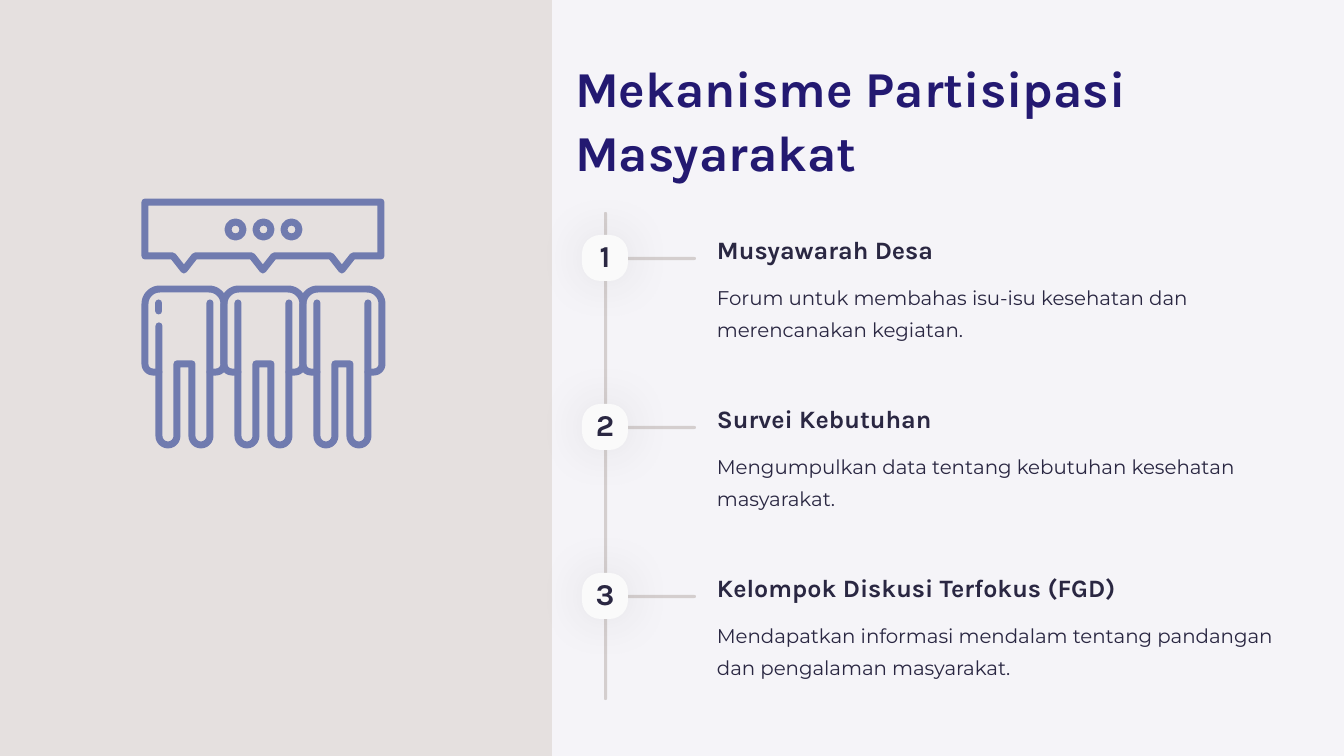
import math

import lxml.etree
import pptx
import pptx.dml.color
import pptx.enum.shapes
import pptx.enum.text
import pptx.oxml.ns
import pptx.util

PX = 914400 / 134.4
COLORS = {
    "page": "F5F4F8",
    "panel": "E5E0DF",
    "title": "231971",
    "text": "2A2742",
    "line": "D4CECE",
    "badge": "FAFAFA",
    "icon": "707BAF",
    "shadow": "333333",
}
STEPS = [
    ("Musyawarah Desa", "Forum untuk membahas isu-isu kesehatan dan merencanakan kegiatan."),
    ("Survei Kebutuhan", "Mengumpulkan data tentang kebutuhan kesehatan masyarakat."),
    ("Kelompok Diskusi Terfokus (FGD)",
     "Mendapatkan informasi mendalam tentang pandangan dan pengalaman masyarakat."),
]
STEP_PITCH = 169
STROKE = 7
SHAPES = pptx.enum.shapes.MSO_SHAPE
LEFT = pptx.enum.text.PP_ALIGN.LEFT
CENTER = pptx.enum.text.PP_ALIGN.CENTER


def px(length):
    return pptx.util.Emu(round(length * PX))


def color(name):
    return pptx.dml.color.RGBColor.from_string(COLORS[name])


def add_block(page, kind, left, top, width, height, fill, rounding=None):
    block = page.shapes.add_shape(kind, px(left), px(top), px(width), px(height))
    block.shadow.inherit = False
    block.fill.solid()
    block.fill.fore_color.rgb = color(fill)
    block.line.fill.background()
    if rounding is not None:
        block.adjustments[0] = rounding
    return block


def add_soft_shadow(block):
    effects = block.element.spPr.find(pptx.oxml.ns.qn("a:effectLst"))
    shadow = lxml.etree.SubElement(effects, pptx.oxml.ns.qn("a:outerShdw"),
                                   blurRad=str(pptx.util.Pt(26)), dist="0", dir="0")
    tint = lxml.etree.SubElement(shadow, pptx.oxml.ns.qn("a:srgbClr"), val=COLORS["shadow"])
    lxml.etree.SubElement(tint, pptx.oxml.ns.qn("a:alpha"), val="10000")


def write(box, text, font, size, spacing, ink, bold=False, align=LEFT):
    frame = box.text_frame
    frame.margin_left = frame.margin_right = frame.margin_top = frame.margin_bottom = 0
    frame.word_wrap = True
    frame.auto_size = pptx.enum.text.MSO_AUTO_SIZE.NONE
    frame.vertical_anchor = pptx.enum.text.MSO_ANCHOR.TOP
    para = frame.paragraphs[0]
    para.alignment = align
    para.line_spacing = pptx.util.Pt(spacing)
    para.space_before = pptx.util.Pt(0)
    span = para.add_run()
    span.text = text
    span.font.name = font
    span.font.size = pptx.util.Pt(size)
    span.font.bold = bold
    span.font.color.rgb = color(ink)


def add_text(page, left, top, width, height, *style, **options):
    box = page.shapes.add_textbox(px(left), px(top), px(width), px(height))
    write(box, *style, **options)


def style_stroke(shape):
    """Give an icon part an unfilled outline with round ends and corners."""
    shape.shadow.inherit = False
    shape.fill.background()
    shape.line.color.rgb = color("icon")
    shape.line.width = px(STROKE)
    line = shape.element.spPr.find(pptx.oxml.ns.qn("a:ln"))
    line.set("cap", "rnd")
    lxml.etree.SubElement(line, pptx.oxml.ns.qn("a:round"))


def add_stroke(page, left, top, points, close=False):
    places = [(px(left + x), px(top + y)) for x, y in points]
    builder = page.shapes.build_freeform(*places[0], scale=1.0)
    builder.add_line_segments(places[1:], close=close)
    style_stroke(builder.convert_to_shape())


def arc(x, y, radius, start, end, steps=12):
    """Points on a circle; degrees run clockwise from the right."""
    angles = [math.radians(start + (end - start) * i / steps) for i in range(steps + 1)]
    return [(x + radius * math.cos(a), y + radius * math.sin(a)) for a in angles]


def add_speech_bubble(page, left, top, width, height):
    outline = [(0, 0), (width, 0), (width, height)]
    for tip in (197, 118, 39):
        outline += [(tip + 11, height), (tip, height + 14), (tip - 11, height)]
    add_stroke(page, left, top, outline + [(0, height)], close=True)
    for offset in (-28, 0, 28):
        dot = page.shapes.add_shape(SHAPES.OVAL, px(left + width / 2 + offset - 7),
                                    px(top + height / 2 - 7), px(15), px(15))
        style_stroke(dot)


def add_person(page, left, top, width, broken_leg):
    """Draw shoulders with arms, then both legs as one line."""
    shoulders = ([(14, 83)] + arc(8, 75, 8, 90, 180) + arc(15, 15, 15, 180, 270)
                 + arc(width - 15, 15, 15, 270, 360)
                 + arc(width - 8, 75, 8, 0, 90) + [(width - 14, 83)])
    add_stroke(page, left, top, shoulders)
    foot = arc(23, 147, 9, 180, 0)
    other_foot = [(width - x, y) for x, y in reversed(foot)]
    legs = ([(14, 37 if broken_leg else 14)] + foot + [(32, 75), (width - 32, 75)]
            + other_foot + [(width - 14, 14)])
    add_stroke(page, left, top, legs)
    if broken_leg:
        add_stroke(page, left, top, [(14, 14), (14, 22)])


def add_discussion_icon(page, left, top):
    add_speech_bubble(page, left, top, 236, 54)
    for index in range(3):
        add_person(page, left + 79 * index, top + 87, 79, broken_leg=index == 0)


def add_panel(page, left, top, width, height):
    add_block(page, SHAPES.RECTANGLE, left, top, width, height, "panel")
    add_discussion_icon(page, left + 145, top + 202)


def add_title(page, left, top, width, height):
    title = page.shapes.title
    title.left, title.top, title.width, title.height = map(px, (left, top, width, height))
    write(title, "Mekanisme Partisipasi Masyarakat", "Karla", 26.9, 33.8, "title", bold=True)


def add_step(page, left, top, number, heading, detail):
    rounded = SHAPES.ROUNDED_RECTANGLE
    add_block(page, rounded, left + 43, top + 22, 71, 3, "line", 0.5)
    add_soft_shadow(add_block(page, rounded, left, top, 46, 46, "badge", 0.4))
    add_text(page, left, top + 8, 46, 31, str(number), "Karla", 16.2, 16.2, "text",
             bold=True, align=CENTER)
    add_text(page, left + 135, top - 2, 556, 32, heading, "Karla", 13.4, 16.9, "text", bold=True)
    add_text(page, left + 135, top + 42, 556, 64, detail, "Montserrat", 10.6, 17.2, "text")


def add_timeline(page, left, top, height):
    add_block(page, SHAPES.ROUNDED_RECTANGLE, left + 22, top, 3, height, "line", 0.5)
    for index, (heading, detail) in enumerate(STEPS):
        add_step(page, left, top + 23 + STEP_PITCH * index, index + 1, heading, detail)


def main():
    deck = pptx.Presentation()
    deck.slide_width, deck.slide_height = px(1344), px(756)
    page = deck.slides.add_slide(deck.slide_layouts[5])
    page.background.fill.solid()
    page.background.fill.fore_color.rgb = color("page")
    add_panel(page, 0, 0, 552, 756)
    add_title(page, 575, 55, 699, 126)
    add_timeline(page, 582, 212, 488)
    deck.save("out.pptx")


if __name__ == "__main__":
    main()
